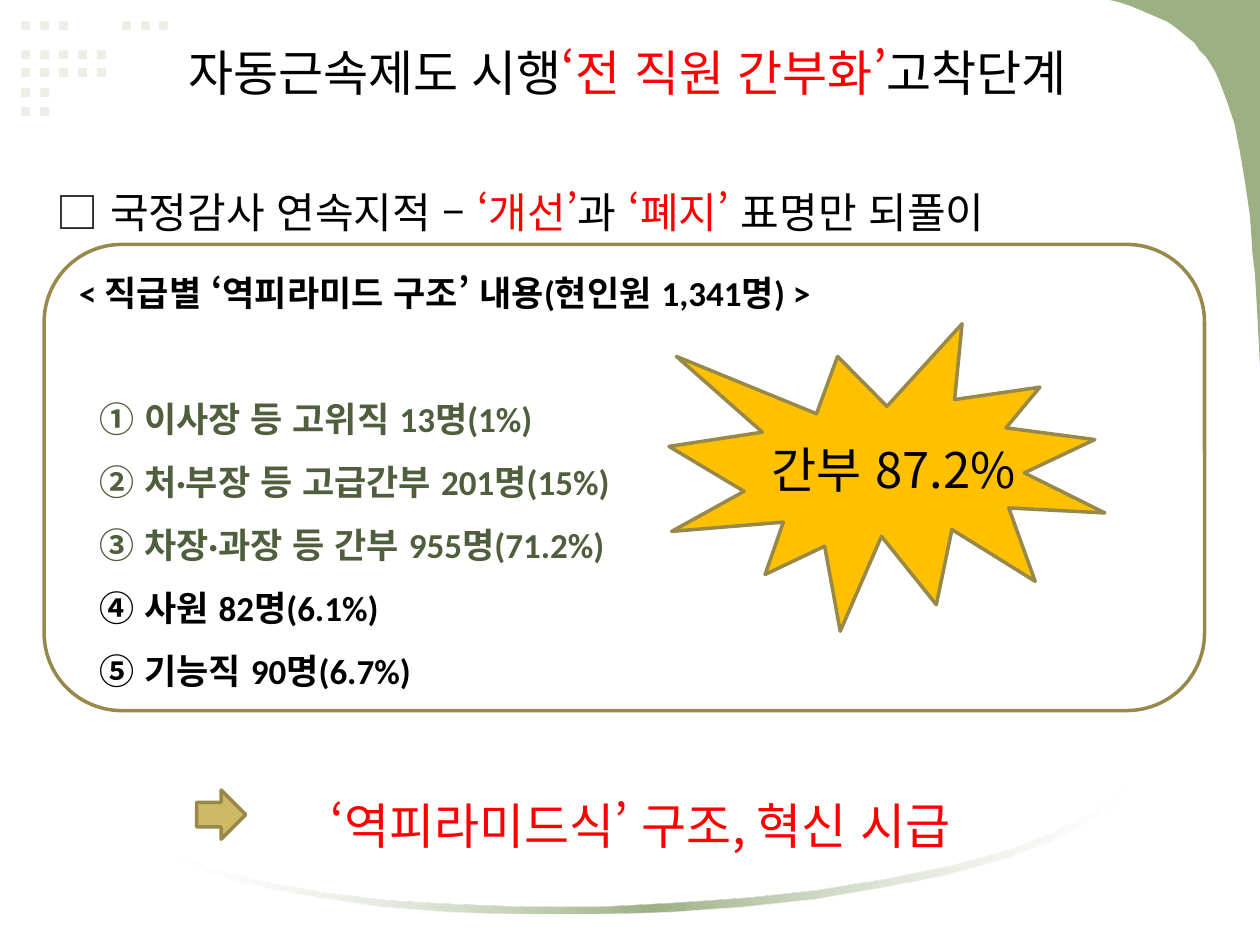
import pptx
import pptx.util
import pptx.dml.color
import pptx.enum.lang
import pptx.enum.shapes
import pptx.enum.text
import pptx.oxml
import pptx.oxml.ns

In, Pt = pptx.util.Inches, pptx.util.Pt
SHAPE = pptx.enum.shapes.MSO_SHAPE
ALIGN = pptx.enum.text.PP_ALIGN
KOREAN, LATIN = "Noto Sans CJK KR", "Calibri"
COLORS = {"black": "000000", "red": "FF0000", "dark": "4F5E3C", "dot": "EBEFE6",
          "sage": "9CB084", "edge": "98894B", "burst": "FFC000", "arrow": "CEB966"}

# Dot rows: top and column positions, in steps from the first dot
DOT_STEP, DOT_LEFT, DOT_SIZE = 0.15, 0.17, 0.07
DOT_ROWS = {0.17: [0, 1, 2, 5.33, 6.33, 7.27], 0.4: range(5), 0.54: range(5),
            0.7: range(2), 0.85: range(2)}

CORNER = [(8.81, 0), (10, 0), (10, 2.91), (9.99, 2.71), (9.98, 2.52), (9.97, 2.34),
          (9.96, 2.17), (9.94, 2.01), (9.93, 1.85), (9.92, 1.71), (9.9, 1.57),
          (9.88, 1.44), (9.86, 1.32), (9.84, 1.2), (9.82, 1.1), (9.8, 0.99),
          (9.77, 0.9), (9.74, 0.81), (9.71, 0.73), (9.68, 0.65), (9.65, 0.58),
          (9.61, 0.51), (9.57, 0.45), (9.52, 0.4), (9.48, 0.34), (9.43, 0.3),
          (9.37, 0.25), (9.32, 0.21), (9.26, 0.17), (9.19, 0.14), (9.12, 0.11),
          (9.05, 0.08), (8.98, 0.05), (8.89, 0.02)]
SWOOSH = [(8.92, 6.25), (8.92, 6.32), (8.67, 6.5), (8.35, 6.67), (7.95, 6.82),
          (7.5, 6.94), (7, 7.04), (6.46, 7.13), (5.89, 7.19), (5.31, 7.23),
          (4.72, 7.25), (4.14, 7.25), (3.57, 7.23), (3.04, 7.19), (2.55, 7.12),
          (2.1, 7.04), (1.72, 6.94), (1.42, 6.82), (1.42, 6.79), (1.73, 6.91),
          (2.12, 7), (2.57, 7.08), (3.07, 7.14), (3.61, 7.17), (4.17, 7.19),
          (4.76, 7.19), (5.34, 7.16), (5.93, 7.12), (6.49, 7.06), (7.03, 6.97),
          (7.53, 6.87), (7.98, 6.75), (8.37, 6.6), (8.68, 6.44)]

HEADING = "< 직급별 ‘역피라미드 구조’ 내용(현인원 1,341명) >"
GRADES = [("① 이사장 등 고위직 13명(1%)", "dark"),
          ("② 처·부장 등 고급간부 201명(15%)", "dark"),
          ("③ 차장·과장 등 간부 955명(71.2%)", "dark"),
          ("④ 사원 82명(6.1%)", "black"),
          ("⑤ 기능직 90명(6.7%)", "black")]


def rgb(name):
    return pptx.dml.color.RGBColor.from_string(COLORS[name])


def paint(s, fill=None, line=None):
    s.shadow.inherit = False
    if fill:
        s.fill.solid()
        s.fill.fore_color.rgb = rgb(fill)
    else:
        s.fill.background()
    if line:
        s.line.color.rgb = rgb(line)
        s.line.width = Pt(2)
    else:
        s.line.fill.background()


def add_shape(sp, kind, box, fill=None, line=None):
    s = sp.add_shape(kind, *map(In, box))
    paint(s, fill, line)
    return s


def add_outline(sp, points, fill):
    pts = [(In(x), In(y)) for x, y in points]
    fb = sp.build_freeform(*pts[0])
    fb.add_line_segments(pts[1:], close=True)
    s = fb.convert_to_shape()
    paint(s, fill)
    return s


def fade_ends(s, color):
    """Replace the solid fill by one that fades to clear white at both ends."""
    end = '<a:srgbClr val="FFFFFF"><a:alpha val="30000"/></a:srgbClr>'
    grad = pptx.oxml.parse_xml(
        f'<a:gradFill {pptx.oxml.ns.nsdecls("a")} rotWithShape="1"><a:gsLst>'
        f'<a:gs pos="0">{end}</a:gs>'
        f'<a:gs pos="50000"><a:srgbClr val="{COLORS[color]}"/></a:gs>'
        f'<a:gs pos="100000">{end}</a:gs>'
        '</a:gsLst><a:lin ang="0" scaled="0"/></a:gradFill>')
    solid = s.element.spPr.find(pptx.oxml.ns.qn("a:solidFill"))
    solid.getparent().replace(solid, grad)


def write(p, runs, size, font=KOREAN, bold=False, **layout):
    for name, value in layout.items():
        setattr(p, name, value)
    style = {"size": Pt(size), "bold": bold, "name": font,
             "language_id": pptx.enum.lang.MSO_LANGUAGE_ID.KOREAN}
    for text, color in runs:
        r = p.add_run()
        r.text = text
        for name, value in style.items():
            setattr(r.font, name, value)
        r.font.color.rgb = rgb(color)
        ea = pptx.oxml.parse_xml(
            f'<a:ea {pptx.oxml.ns.nsdecls("a")} typeface="{KOREAN}"/>')
        r.font._element.find(pptx.oxml.ns.qn("a:latin")).addnext(ea)


def add_text(sp, box):
    tf = sp.add_textbox(*map(In, box)).text_frame
    tf.word_wrap = True
    return tf


def add_title(s, box, runs):
    t = s.shapes.title
    t.left, t.top, t.width, t.height = map(In, box)
    tf = t.text_frame
    tf.vertical_anchor = pptx.enum.text.MSO_ANCHOR.TOP
    tf.auto_size = pptx.enum.text.MSO_AUTO_SIZE.NONE
    write(tf.paragraphs[0], runs, 28, alignment=ALIGN.CENTER)


def add_grades(sp, box):
    tf = add_text(sp, box)
    write(tf.paragraphs[0], [(HEADING, "black")], 20, LATIN, True, line_spacing=1.5)
    for i, grade in enumerate(GRADES):
        p = tf.add_paragraph()
        write(p, [grade], 20, LATIN, True, line_spacing=1.5,
              space_before=Pt(0 if i else 36))
        p._p.get_or_add_pPr().set("marL", str(In(0.16)))


def main():
    prs = pptx.Presentation()
    prs.slide_width, prs.slide_height = In(10), In(7.5)
    s = prs.slides.add_slide(prs.slide_layouts[5])
    sp = s.shapes

    # Background decoration
    for top, columns in DOT_ROWS.items():
        for c in columns:
            add_shape(sp, SHAPE.RECTANGLE,
                      (DOT_LEFT + c * DOT_STEP, top, DOT_SIZE, DOT_SIZE), "dot")
    add_outline(sp, CORNER, "sage")
    fade_ends(add_outline(sp, SWOOSH, "sage"), "sage")

    # Title and lead line
    add_title(s, (0.12, 0.29, 9.72, 0.57),
              [("자동근속제도 시행", "black"), ("‘전 직원 간부화’", "red"),
               ("고착단계", "black")])
    write(add_text(sp, (0.35, 1.23, 9.23, 0.71)).paragraphs[0],
          [("□ 국정감사 연속지적 – ", "black"), ("‘개선’", "red"), ("과 ", "black"),
           ("‘폐지’ ", "red"), ("표명만 되풀이", "black")], 24, line_spacing=1.5)

    # Framed list of grades
    add_grades(sp, (0.53, 1.94, 9.12, 3.64))
    add_shape(sp, SHAPE.ROUNDED_RECTANGLE, (0.35, 1.94, 9.21, 3.7), line="edge")

    # Burst with the share of managers
    add_shape(sp, SHAPE.EXPLOSION1, (5.31, 2.57, 3.46, 2.44), "burst", "edge")
    write(add_text(sp, (5.87, 3.44, 2.44, 0.57)).paragraphs[0],
          [("간부 87.2%", "black")], 28, alignment=ALIGN.CENTER)

    # Conclusion
    write(add_text(sp, (0.35, 6.03, 9.47, 0.7)).paragraphs[0],
          [("‘역피라미드식’ 구조, 혁신 시급", "red")], 28,
          alignment=ALIGN.CENTER, line_spacing=1.5)
    add_shape(sp, SHAPE.RIGHT_ARROW, (1.56, 6.27, 0.39, 0.39), "arrow", "edge")

    prs.save("out.pptx")


if __name__ == "__main__":
    main()
